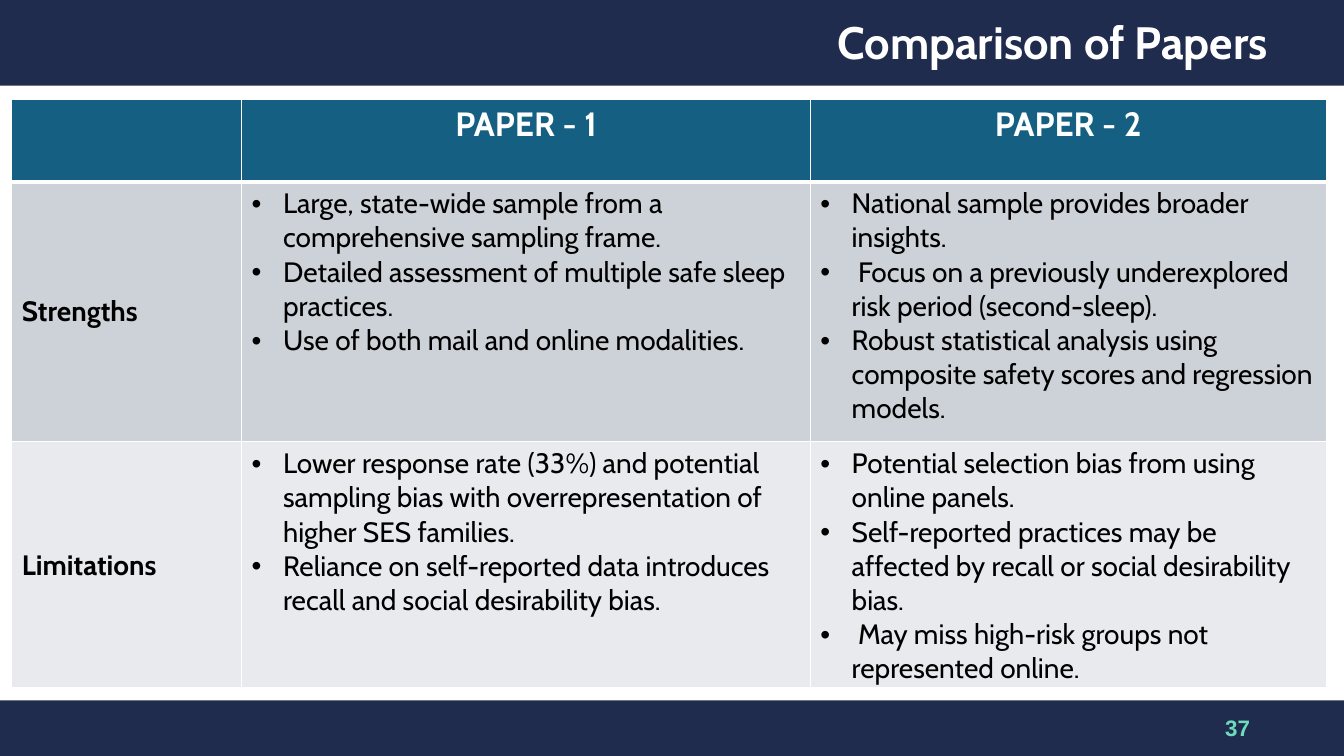
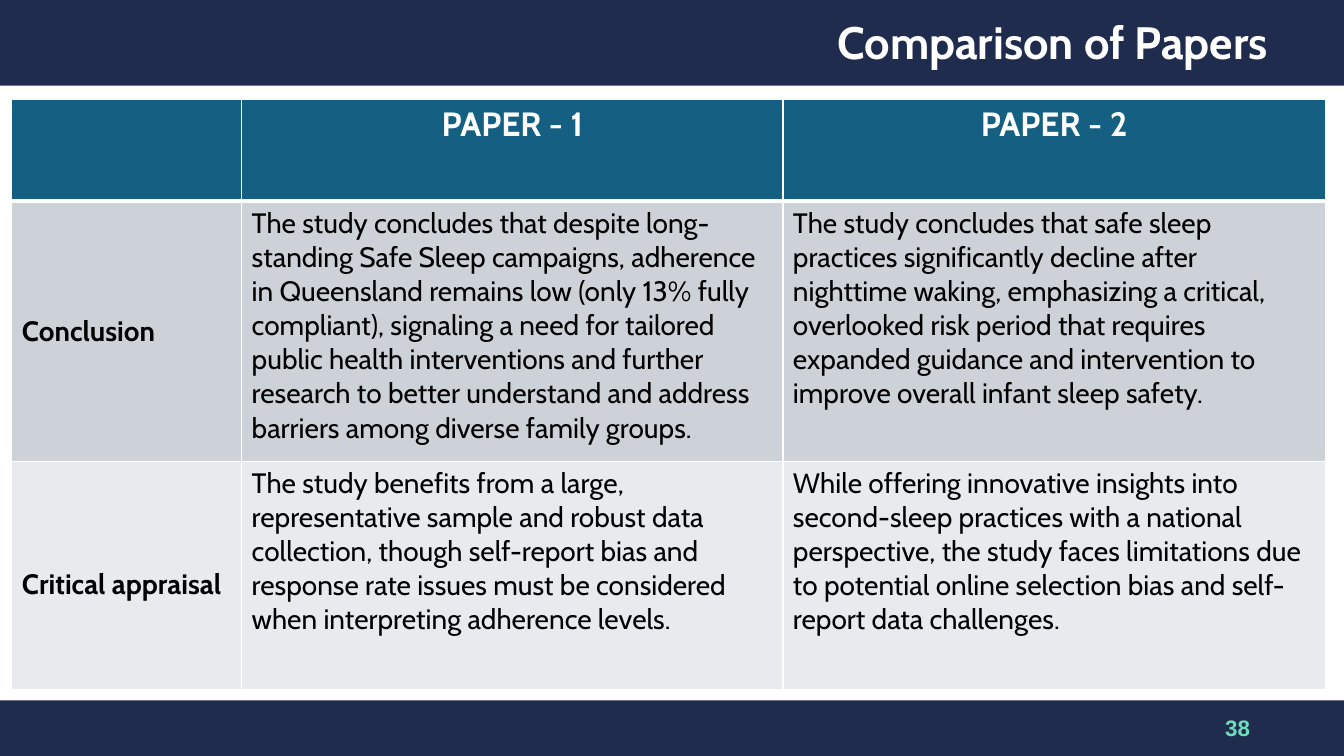
from dataclasses import dataclass

from lxml import etree
from pptx import Presentation
from pptx.dml.color import RGBColor
from pptx.enum.shapes import MSO_SHAPE
from pptx.enum.text import MSO_ANCHOR, MSO_AUTO_SIZE, PP_ALIGN
from pptx.oxml.ns import qn
from pptx.util import Cm, Pt

RECTANGLE = MSO_SHAPE.RECTANGLE
TOP, MIDDLE = MSO_ANCHOR.TOP, MSO_ANCHOR.MIDDLE
LEFT, CENTER, RIGHT = PP_ALIGN.LEFT, PP_ALIGN.CENTER, PP_ALIGN.RIGHT
NO_AUTOFIT = MSO_AUTO_SIZE.NONE

# Content: a list in a cell becomes bullets, a string becomes plain text
TITLE = "Comparison of Papers"
HEADINGS = ("", "PAPER - 1", "PAPER - 2")
PAGES = [
    {
        "number": "37",
        "columns": (5.79, 14.33, 13),
        "header_height": 2.08,
        "rows": [
            ("Strengths",
             ["Large, state-wide sample from a comprehensive sampling frame.",
              "Detailed assessment of multiple safe sleep practices.",
              "Use of both mail and online modalities."],
             ["National sample provides broader insights.",
              " Focus on a previously underexplored risk period (second-sleep).",
              "Robust statistical analysis using composite safety scores and "
              "regression models."]),
            ("Limitations",
             ["Lower response rate (33%) and potential sampling bias with "
              "overrepresentation of higher SES families.",
              "Reliance on self-reported data introduces recall and social "
              "desirability bias."],
             ["Potential selection bias from using online panels.",
              "Self-reported practices may be affected by recall or social "
              "desirability bias.",
              " May miss high-risk groups not represented online."]),
        ],
    },
    {
        "number": "38",
        "columns": (5.79, 13.64, 13.67),
        "header_height": 2.57,
        "rows": [
            ("Conclusion",
             "The study concludes that despite long-standing Safe Sleep campaigns, "
             "adherence in Queensland remains low (only 13% fully compliant), "
             "signaling a need for tailored public health interventions and further "
             "research to better understand and address barriers among diverse "
             "family groups.",
             "The study concludes that safe sleep practices significantly decline "
             "after nighttime waking, emphasizing a critical, overlooked risk period "
             "that requires expanded guidance and intervention to improve overall "
             "infant sleep safety."),
            ("Critical appraisal",
             "The study benefits from a large, representative sample and robust data "
             "collection, though self-report bias and response rate issues must be "
             "considered when interpreting adherence levels.",
             "While offering innovative insights into second-sleep practices with a "
             "national perspective, the study faces limitations due to potential "
             "online selection bias and self-report data challenges."),
        ],
    },
]


@dataclass(frozen=True)
class Theme:
    navy: str = "1F2C4E"
    teal: str = "156082"
    mint: str = "6EDBBB"
    white: str = "FFFFFF"
    black: str = "000000"
    row_fills: tuple = ("CCD2D8", "E8EAED")
    font: str = "Cabin"
    number_font: str = "Arial"
    title_size: float = 32.4
    heading_size: int = 24
    body_size: int = 20
    number_size: int = 16


THEME = Theme()

# Geometry in centimetres
WIDTH, HEIGHT = 33.87, 19.05
TOP_BAND, BOTTOM_BAND = 2.16, 1.4
TABLE_LEFT, TABLE_TOP = 0.3, 2.5
ROW_HEIGHTS = (6.55, 5.77)
BULLET_INDENT = 0.79
LABEL_DROP = 2.69  # top margin of the label in the last row


def style(para, size, color, bold=False, align=LEFT, font=THEME.font):
    para.alignment = align
    para.font.name = font
    para.font.size = Pt(size)
    para.font.bold = bold
    para.font.color.rgb = RGBColor.from_string(color)


def add_bullet(para):
    props = para._p.get_or_add_pPr()
    props.set("marL", str(Cm(BULLET_INDENT)))
    props.set("indent", str(-Cm(BULLET_INDENT)))
    etree.SubElement(props, qn("a:buFont")).set("typeface", "Arial")
    etree.SubElement(props, qn("a:buChar")).set("char", "•")


def set_borders(cell, bottom=1):
    props = cell._tc.get_or_add_tcPr()
    widths = {"a:lnL": 1, "a:lnR": 1, "a:lnT": 1, "a:lnB": bottom}
    for index, (tag, width) in enumerate(widths.items()):
        line = etree.Element(qn(tag), w=str(Pt(width)))
        fill = etree.SubElement(line, qn("a:solidFill"))
        etree.SubElement(fill, qn("a:srgbClr")).set("val", THEME.white)
        props.insert(index, line)


def fill_cell(cell, color, bottom=1):
    cell.fill.solid()
    cell.fill.fore_color.rgb = RGBColor.from_string(color)
    set_borders(cell, bottom)


def write_body(cell, content):
    bulleted = isinstance(content, list)
    frame = cell.text_frame
    for index, text in enumerate(content if bulleted else [content]):
        para = frame.add_paragraph() if index else frame.paragraphs[0]
        para.text = text
        if bulleted:
            add_bullet(para)
        style(para, THEME.body_size, THEME.black)


def add_bands(page, layout):
    """Draw the two bands and move them to the layout the slides share."""
    for top, height in ((0, TOP_BAND), (HEIGHT - BOTTOM_BAND, BOTTOM_BAND)):
        band = page.shapes.add_shape(RECTANGLE, 0, Cm(top), Cm(WIDTH), Cm(height))
        band.shadow.inherit = False
        band.fill.solid()
        band.fill.fore_color.rgb = RGBColor.from_string(THEME.navy)
        band.line.fill.background()
        layout.shapes.element.insert(2, band.element)


def add_title(page):
    title = page.shapes.title
    title.left, title.top = Cm(20.85), Cm(0.23)
    title.width, title.height = Cm(12.55), Cm(1.78)
    frame = title.text_frame
    frame.text = TITLE
    frame.auto_size = NO_AUTOFIT
    frame.vertical_anchor = MIDDLE
    para = frame.paragraphs[0]
    para.line_spacing = 0.9
    style(para, THEME.title_size, THEME.white, bold=True)


def add_number(page, number):
    box = page.shapes.add_textbox(Cm(24.13), Cm(17.83), Cm(7.62), Cm(1.02))
    frame = box.text_frame
    frame.word_wrap = True
    frame.vertical_anchor = MIDDLE
    frame.text = number
    style(frame.paragraphs[0], THEME.number_size, THEME.mint, True, RIGHT,
          THEME.number_font)


def add_comparison(page, content):
    columns = content["columns"]
    heights = (content["header_height"], *ROW_HEIGHTS)
    table = page.shapes.add_table(
        len(heights), len(columns), Cm(TABLE_LEFT), Cm(TABLE_TOP),
        Cm(sum(columns)), Cm(sum(heights))).table
    for column, width in zip(table.columns, columns):
        column.width = Cm(width)
    for row, height in zip(table.rows, heights):
        row.height = Cm(height)

    # Header row
    for cell, heading in zip(table.rows[0].cells, HEADINGS):
        fill_cell(cell, THEME.teal, bottom=3)
        cell.text = heading
        style(cell.text_frame.paragraphs[0], THEME.heading_size, THEME.white,
              True, CENTER)

    # Label and the two papers in each row
    for index, (label, *papers) in enumerate(content["rows"]):
        label_cell, *paper_cells = table.rows[index + 1].cells
        for cell in (label_cell, *paper_cells):
            fill_cell(cell, THEME.row_fills[index])
        label_cell.text = label
        style(label_cell.text_frame.paragraphs[0], THEME.body_size, THEME.black, True)
        if index:
            label_cell.vertical_anchor = TOP
            label_cell.margin_top = Cm(LABEL_DROP)
        else:
            label_cell.vertical_anchor = MIDDLE
        for cell, paper in zip(paper_cells, papers):
            write_body(cell, paper)


def main():
    deck = Presentation()
    deck.slide_width, deck.slide_height = Cm(WIDTH), Cm(HEIGHT)
    layout = deck.slide_layouts.get_by_name("Title Only")
    for index, content in enumerate(PAGES):
        page = deck.slides.add_slide(layout)
        if index == 0:
            add_bands(page, layout)
        add_title(page)
        add_number(page, content["number"])
        add_comparison(page, content)
    deck.save("out.pptx")


if __name__ == "__main__":
    main()
